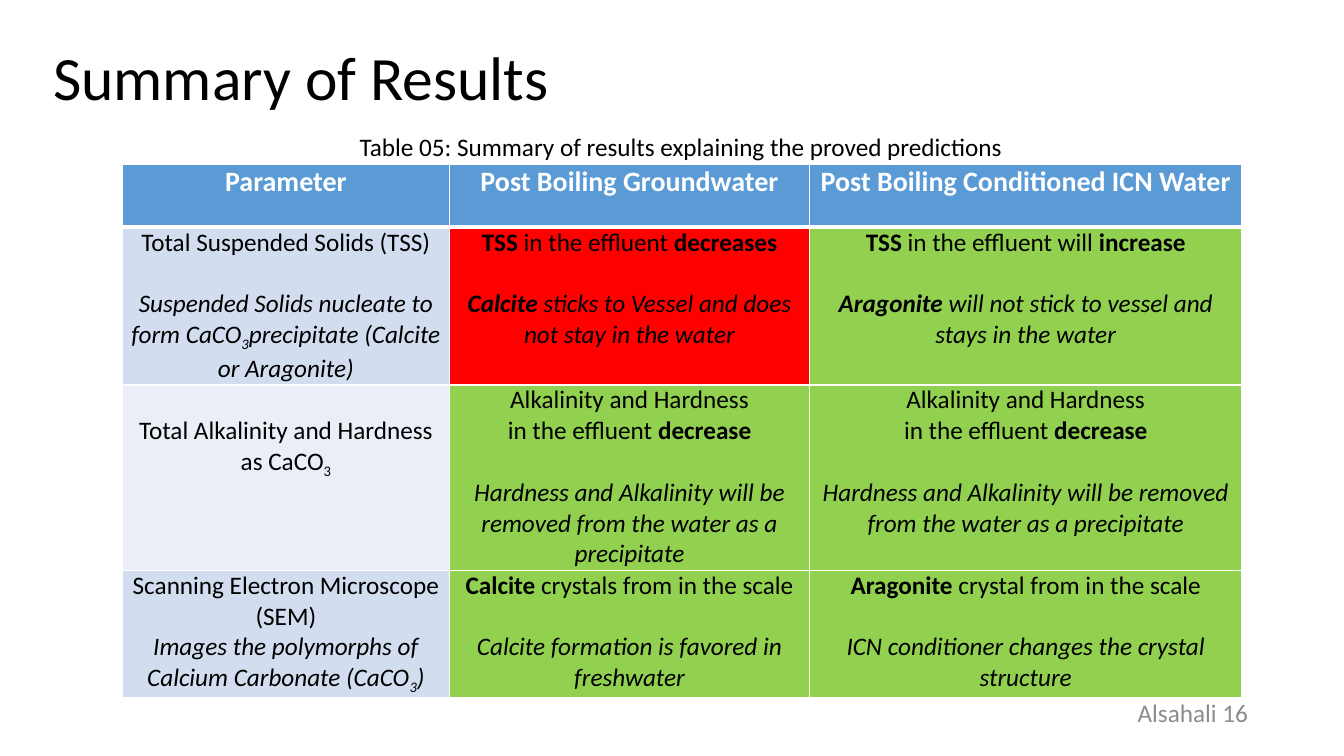
import pptx
import pptx.util
import pptx.dml.color
import pptx.enum.text
import lxml.etree
from pptx.util import Cm, Pt

ALIGN = pptx.enum.text.PP_ALIGN
ANCHOR = pptx.enum.text.MSO_ANCHOR
LINE_HEIGHT = 22  # points, one line of 18 pt text


def rgb(value):
    return pptx.dml.color.RGBColor.from_string(value)


def add_run(p, text, size, color, style=""):
    """Style letters: b bold, i italic, s subscript."""
    r = p.add_run()
    r.text = text
    r.font.name = "Calibri"
    r.font.size = Pt(size)
    r.font.color.rgb = rgb(color)
    r.font.bold = "b" in style
    r.font.italic = "i" in style
    if "s" in style:
        r.font._element.set("baseline", "-25000")


prs = pptx.Presentation()
prs.slide_width, prs.slide_height = Cm(33.87), Cm(19.05)
s = prs.slides.add_slide(prs.slide_layouts[6])

# Title, page label and table caption
labels = [
    ("Summary of Results", 1.09, 0.48, 29.49, 3.12, 44, "000000", ALIGN.LEFT),
    ("Alsahali 16", 23.93, 17.25, 7.77, 1.42, 18, "8C8C8C", ALIGN.RIGHT),
    ("Table 05: Summary of results explaining the proved predictions",
     3.1, 3.18, 28.12, 1.02, 18, "000000", ALIGN.CENTER),
]
for text, left, top, width, height, size, color, align in labels:
    tf = s.shapes.add_textbox(Cm(left), Cm(top), Cm(width), Cm(height)).text_frame
    tf.word_wrap = True
    tf.vertical_anchor = ANCHOR.MIDDLE
    p = tf.paragraphs[0]
    p.alignment = align
    p.line_spacing = 0.9 if size == 44 else 1.0
    add_run(p, text, size, color)

# Table content: cell = (fill, paragraphs), paragraph = (blank lines above, runs)
BLUE, PALE, PALER, RED, GREEN = "5B9BD5", "D2DEEF", "EAEFF7", "FF0000", "92D050"
headings = ["Parameter", "Post Boiling Groundwater", "Post Boiling Conditioned ICN Water"]
hardness = (GREEN, [
    (0, [("Alkalinity and Hardness", "")]),
    (0, [("in the effluent ", ""), ("decrease", "b")]),
    (1, [("Hardness and Alkalinity will be removed from the water as a precipitate", "i")]),
])
rows = [
    [(BLUE, [(0, [(heading, "b")])]) for heading in headings],
    [
        (PALE, [
            (0, [("Total Suspended Solids (TSS)", "")]),
            (1, [("Suspended Solids nucleate to form CaCO", "i"), ("3", "is"),
                 ("precipitate (Calcite or Aragonite)", "i")]),
        ]),
        (RED, [
            (0, [("TSS", "b"), (" in the effluent ", ""), ("decreases", "b")]),
            (1, [("Calcite", "bi"),
                 (" sticks to Vessel and does not stay in the water", "i")]),
        ]),
        (GREEN, [
            (0, [("TSS", "b"), (" in the effluent will ", ""), ("increase", "b")]),
            (1, [("Aragonite ", "bi"),
                 ("will not stick to vessel and stays in the water", "i")]),
        ]),
    ],
    [
        (PALER, [(1, [("Total Alkalinity and Hardness as CaCO", ""), ("3", "s")])]),
        hardness,
        hardness,
    ],
    [
        (PALE, [
            (0, [("Scanning Electron Microscope (SEM)", "")]),
            (0, [("Images the polymorphs of", "i")]),
            (0, [("Calcium Carbonate (CaCO", "i"), ("3", "is"), (")", "i")]),
        ]),
        (GREEN, [
            (0, [("Calcite", "b"), (" crystals from in the scale", "")]),
            (1, [("Calcite formation is favored in freshwater", "i")]),
        ]),
        (GREEN, [
            (0, [("Aragonite", "b"), (" crystal from in the scale", "")]),
            (1, [("ICN conditioner changes the crystal structure", "i")]),
        ]),
    ],
]

# Table grid
widths, heights = [8.25, 9.07, 10.9], [1.57, 3.98, 4.67, 3.2]
table = s.shapes.add_table(len(heights), len(widths), Cm(3.08), Cm(4.15),
                           Cm(sum(widths)), Cm(sum(heights))).table
for column, width in zip(table.columns, widths):
    column.width = Cm(width)
for row, height in zip(table.rows, heights):
    row.height = Cm(height)

# Table cells
for i, row in enumerate(rows):
    for j, (fill, paragraphs) in enumerate(row):
        cell = table.cell(i, j)
        cell.margin_left = cell.margin_right = Cm(0.19)
        cell.margin_top = Pt(LINE_HEIGHT * paragraphs[0][0])
        cell.margin_bottom = 0

        # White borders, thick around the bottom of the heading row
        tcPr = cell._tc.get_or_add_tcPr()
        for side in ("L", "R", "T", "B"):
            thick = (i, side) in ((0, "B"), (1, "T"))
            tcPr.append(lxml.etree.fromstring(
                '<a:ln%s xmlns:a="http://schemas.openxmlformats.org/drawingml/2006/main"'
                ' w="%d"><a:solidFill><a:srgbClr val="FFFFFF"/></a:solidFill></a:ln%s>'
                % (side, Pt(3 if thick else 1), side)))
        cell.fill.solid()
        cell.fill.fore_color.rgb = rgb(fill)

        tf = cell.text_frame
        for k, (blank_lines, runs) in enumerate(paragraphs):
            p = tf.add_paragraph() if k else tf.paragraphs[0]
            p.alignment = ALIGN.CENTER
            if k and blank_lines:
                p.space_before = Pt(LINE_HEIGHT * blank_lines)
            for text, style in runs:
                add_run(p, text, 18 if i else 20, "000000" if i else "FFFFFF", style)

prs.save("out.pptx")
